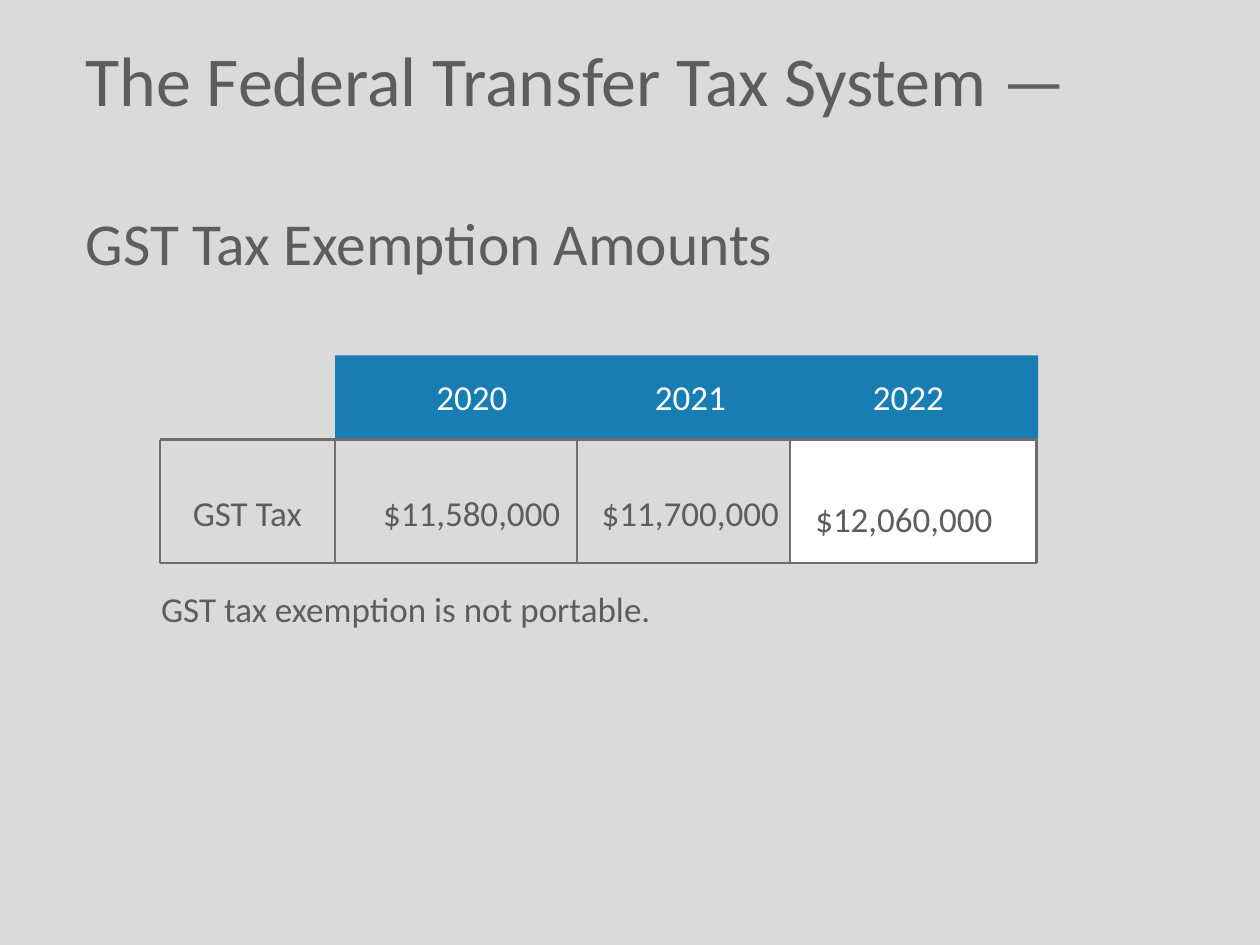
from lxml.etree import SubElement
from pptx import Presentation
from pptx.dml.color import RGBColor as Rgb
from pptx.enum.shapes import MSO_CONNECTOR as Conn, MSO_SHAPE as Shape
from pptx.enum.text import MSO_ANCHOR as Anchor, MSO_AUTO_SIZE as Fit, PP_ALIGN as Align
from pptx.oxml.ns import qn
from pptx.util import Inches, Pt

HUE = {"back": "DADADA", "text": "5D5D5D", "blue": "177DB3",
       "white": "FFFFFF", "edge": "6B6B6B", "rule": "6D6D6D"}
FONT = "Calibri"
COLS, ROWS = 100, 75  # grid of the slide
WIDE, HIGH = Inches(10), Inches(7.5)


def across(cols):
    return round(WIDE * cols / COLS)


def down(rows):
    return round(HIGH * rows / ROWS)


def span(box):
    """Turn a box in columns and rows into slide lengths."""
    x, y, w, h = box
    return across(x), down(y), across(w), down(h)


def hue(name):
    return Rgb.from_string(HUE[name])


def write(para, text, size=20, tint="text", align=Align.LEFT):
    para.alignment = align
    run = para.add_run()
    run.text = text
    run.font.name, run.font.size = FONT, Pt(size)
    run.font.color.rgb = hue(tint)


def add_title(slide, box):
    title = slide.shapes.title
    title.left, title.top, title.width, title.height = span(box)
    frame = title.text_frame
    frame.auto_size, frame.word_wrap = Fit.NONE, True
    frame.vertical_anchor = Anchor.MIDDLE
    write(frame.paragraphs[0], "The Federal Transfer Tax System —", 40)
    para = frame.add_paragraph()
    para.space_before = Pt(49)
    write(para, "GST Tax Exemption Amounts", 34)


def add_rect(slide, box, fill, edge=None):
    rect = slide.shapes.add_shape(Shape.RECTANGLE, *span(box))
    rect.shadow.inherit = False
    rect.fill.solid()
    rect.fill.fore_color.rgb = hue(fill)
    if edge:
        rect.line.color.rgb = hue(edge)
        rect.line.width = Pt(0.75)
    else:
        rect.line.fill.background()


def clear(cell):
    """Leave a cell with neither borders nor fill."""
    cell.fill.background()
    props = cell._tc.get_or_add_tcPr()
    for i, side in enumerate(("lnL", "lnR", "lnT", "lnB")):
        line = SubElement(props, qn("a:" + side))
        SubElement(line, qn("a:noFill"))
        props.insert(i, line)


def add_figures(slide, box, widths, heights, data):
    table = slide.shapes.add_table(len(data), len(data[0]), *span(box)).table
    table.first_row = table.horz_banding = False
    for col, width in zip(table.columns, widths):
        col.width = across(width)
    for row, height in zip(table.rows, heights):
        row.height = down(height)
    for r, line in enumerate(data):
        for c, text in enumerate(line):
            cell = table.cell(r, c)
            clear(cell)
            cell.vertical_anchor = Anchor.MIDDLE
            if text:
                write(cell.text_frame.paragraphs[0], text,
                      tint="text" if r else "white",
                      align=Align.CENTER if c else Align.LEFT)
    last = table.cell(len(data) - 1, len(data[0]) - 1)
    last.margin_top, last.margin_right = down(1.5), across(1.7)


def add_rule(slide, x1, y1, x2, y2):
    rule = slide.shapes.add_connector(
        Conn.STRAIGHT, across(x1), down(y1), across(x2), down(y2))
    rule.line.color.rgb = hue("rule")
    rule.line.width = Pt(1.5)
    SubElement(rule._element.spPr, qn("a:effectLst"))


def add_frame(slide, box, stops):
    """Rule a box round, with uprights at the stops inside it."""
    x, y, w, h = box
    for stop in (0, *stops, w):
        add_rule(slide, x + stop, y, x + stop, y + h)
    for level in (y, y + h):
        add_rule(slide, x, level, x + w, level)


def add_note(slide, box):
    frame = slide.shapes.add_textbox(*span(box)).text_frame
    frame.word_wrap = True
    write(frame.paragraphs[0], "GST tax exemption is not portable.")


def main():
    deck = Presentation()
    deck.slide_width, deck.slide_height = WIDE, HIGH
    slide = deck.slides.add_slide(deck.slide_layouts[5])
    slide.background.fill.solid()
    slide.background.fill.fore_color.rgb = hue("back")

    add_rect(slide, (62.7, 34.9, 19.5, 9.8), "white", "edge")
    add_rect(slide, (26.6, 28.2, 55.8, 6.7), "blue")
    add_title(slide, (5.8, 5.8, 79.9, 13.3))
    add_figures(slide, (14.3, 28.6, 66.4, 18.4),
                (14.5, 17.3, 17.4, 17.2), (6.1, 12.3),
                (("", "2020", "2021", "2022"),
                 ("GST Tax", "$11,580,000", "$11,700,000", "$12,060,000")))
    add_note(slide, (11.8, 46.1, 57.5, 4.4))
    add_frame(slide, (12.7, 34.9, 69.6, 9.8), (13.9, 33.1, 50))
    deck.save("out.pptx")


if __name__ == "__main__":
    main()
